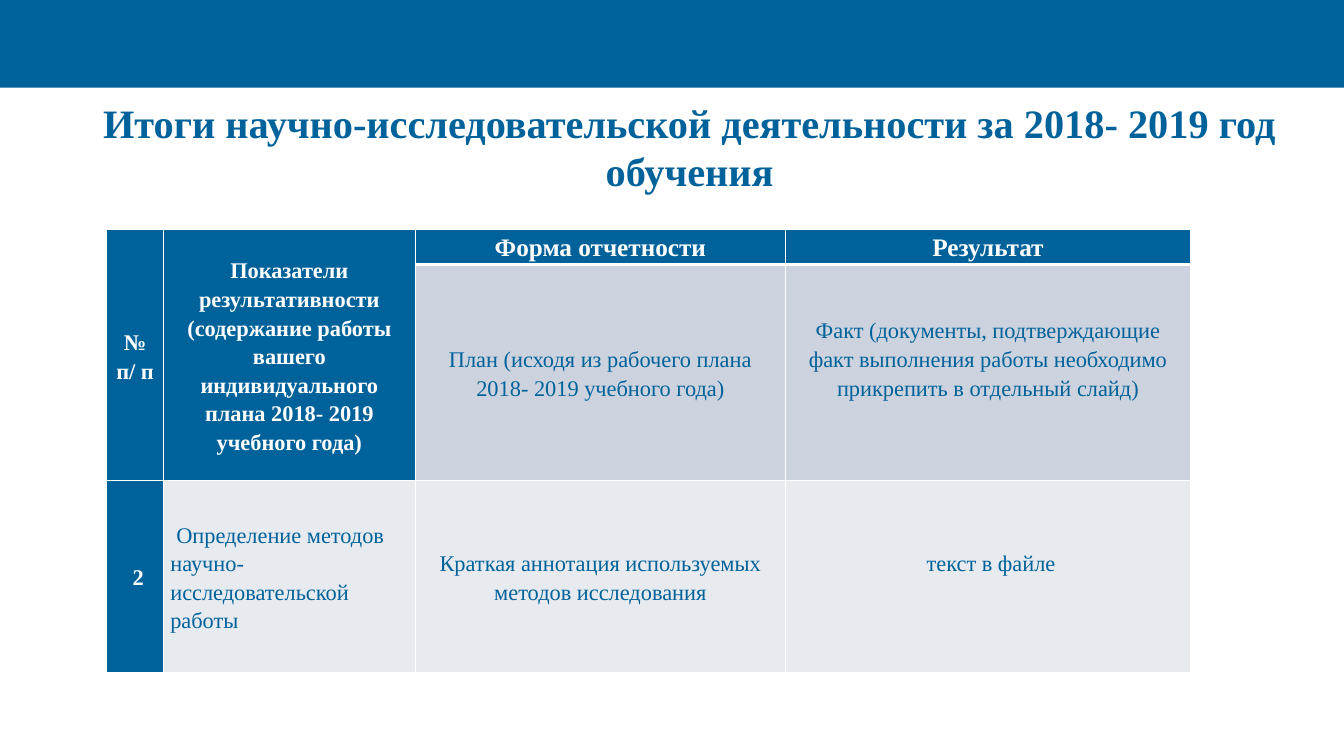
"""Builds a slide with a table of research results for the 2018-2019 study year."""
from lxml import etree
from pptx import Presentation
from pptx.dml.color import RGBColor
from pptx.enum.shapes import MSO_SHAPE
from pptx.enum.text import MSO_ANCHOR, PP_ALIGN
from pptx.oxml.ns import qn
from pptx.util import Inches, Pt

RECTANGLE = MSO_SHAPE.RECTANGLE
MIDDLE, TOP = MSO_ANCHOR.MIDDLE, MSO_ANCHOR.TOP
CENTER, LEFT = PP_ALIGN.CENTER, PP_ALIGN.LEFT
COLORS = {"blue": "00629B", "white": "FFFFFF", "band": "CCD3DE", "pale": "E7EAEF"}


def write(frame, text, size=16, color="blue", bold=False, align=CENTER, spacing=1.15, indent=0):
    """Fill a text frame with one paragraph per line of text."""
    frame.word_wrap = True
    for index, line in enumerate(text.split("\n")):
        para = frame.paragraphs[0] if index == 0 else frame.add_paragraph()
        para.alignment = align
        para.line_spacing = spacing
        if indent:
            para._p.get_or_add_pPr().set("indent", str(Inches(indent)))
        span = para.add_run()
        span.text = line
        span.font.name = "Times New Roman"
        span.font.size = Pt(size)
        span.font.bold = bold
        span.font.color.rgb = RGBColor.from_string(COLORS[color])


def style_cell(cell, fill, bottom_width):
    """Give a cell white borders and a solid fill."""
    properties = cell._tc.get_or_add_tcPr()
    for side, width in (("lnL", 1), ("lnR", 1), ("lnT", 1), ("lnB", bottom_width)):
        border = etree.SubElement(properties, qn(f"a:{side}"), w=str(Pt(width)))
        solid = etree.SubElement(border, qn("a:solidFill"))
        etree.SubElement(solid, qn("a:srgbClr"), val=COLORS["white"])
    cell.fill.solid()
    cell.fill.fore_color.rgb = RGBColor.from_string(COLORS[fill])


deck = Presentation()
deck.slide_width, deck.slide_height = Inches(13.33), Inches(7.5)
page = deck.slides.add_slide(deck.slide_layouts[6])

banner = page.shapes.add_shape(RECTANGLE, 0, 0, deck.slide_width, Inches(0.87))
banner.shadow.inherit = False
banner.fill.solid()
banner.fill.fore_color.rgb = RGBColor.from_string(COLORS["blue"])
banner.line.fill.background()

title = page.shapes.add_textbox(Inches(0.84), Inches(1), Inches(12), Inches(0.9))
title.text_frame.vertical_anchor = MIDDLE
write(title.text_frame, "Итоги научно-исследовательской деятельности за 2018- 2019 год обучения",
      size=28.8, bold=True, spacing=1)

column_widths = [0.56, 2.5, 3.67, 4.02]
row_heights = [0.33, 1.98, 1.9]
table = page.shapes.add_table(
    len(row_heights), len(column_widths), Inches(1.06), Inches(2.28),
    Inches(sum(column_widths)), Inches(sum(row_heights))).table
for column, width in zip(table.columns, column_widths):
    column.width = Inches(width)
for row, height in zip(table.rows, row_heights):
    row.height = Inches(height)

fills = [["blue"] * 4, ["blue", "blue", "band", "band"], ["blue", "pale", "pale", "pale"]]
for row, row_fills in enumerate(fills):
    for column, fill in enumerate(row_fills):
        header_end = (row == 0 and column > 1) or (row == 1 and column < 2)
        style_cell(table.cell(row, column), fill, 3 if header_end else 1)
for column in (0, 1):
    table.cell(0, column).merge(table.cell(1, column))

header = {"color": "white", "bold": True}
entries = [
    (0, 0, "№ п/ п", header, MIDDLE, 0.07, 0),
    (0, 1, "Показатели результативности\n(содержание работы вашего индивидуального "
           "плана 2018- 2019 учебного года)", header, MIDDLE, 0.07, 0),
    (0, 2, "Форма отчетности", {**header, "size": 18}, TOP, 0.07, 0),
    (0, 3, "Результат", {**header, "size": 18}, TOP, 0.07, 0),
    (1, 2, "План (исходя из рабочего плана 2018- 2019 учебного года)", {}, MIDDLE, 0.07, 0),
    (1, 3, "Факт (документы, подтверждающие факт выполнения работы необходимо "
           "прикрепить в отдельный слайд)", {}, MIDDLE, 0.07, 0.29),
    (2, 0, "2", header, MIDDLE, 0.13, 0),
    (2, 1, "Определение методов научно-исследовательской работы",
     {"align": LEFT, "indent": 0.06}, MIDDLE, 0.07, 0),
    (2, 2, "Краткая аннотация используемых методов исследования", {}, MIDDLE, 0.07, 0),
    (2, 3, "текст в файле", {}, MIDDLE, 0.13, 0.29),
]
for row, column, text, style, anchor, left, bottom in entries:
    cell = table.cell(row, column)
    cell.vertical_anchor = anchor
    cell.margin_left, cell.margin_right = Inches(left), Inches(0.07)
    cell.margin_top, cell.margin_bottom = 0, Inches(bottom)
    write(cell.text_frame, text, **style)

deck.save("out.pptx")
